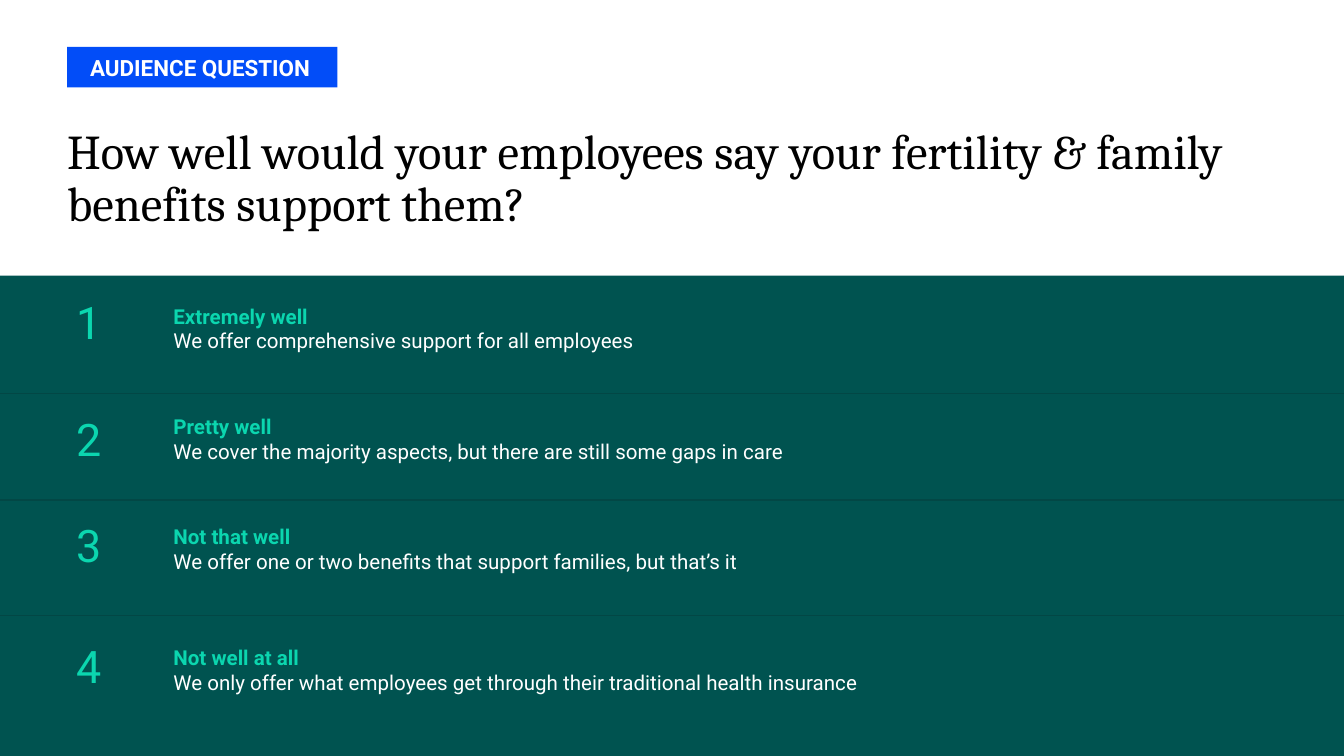
from lxml.etree import SubElement
from pptx import Presentation
from pptx.dml.color import RGBColor
from pptx.enum.shapes import MSO_CONNECTOR, MSO_SHAPE
from pptx.enum.text import MSO_ANCHOR, PP_ALIGN
from pptx.oxml.ns import qn
from pptx.util import Inches, Pt

WHITE = RGBColor(0xFF, 0xFF, 0xFF)
BLACK = RGBColor(0x00, 0x00, 0x00)
BLUE = RGBColor(0x02, 0x4D, 0xF8)
GREEN = RGBColor(0x00, 0x53, 0x50)
DARK_GREEN = RGBColor(0x02, 0x47, 0x45)
MINT = RGBColor(0x0B, 0xD6, 0xAF)
SERIF, SANS = "Cambria", "Roboto"

WIDTH = 10
HEIGHT = WIDTH * 9 / 16
MARGIN = 0.05 * WIDTH
PANEL_TOP = 2.05

# Row top, number inset, text inset, heading, detail
ANSWERS = [
    (PANEL_TOP, 0.13, 0.21, "Extremely well",
     "We offer comprehensive support for all employees"),
    (2.93, 0.12, 0.15, "Pretty well",
     "We cover the majority aspects, but there are still some gaps in care"),
    (3.72, 0.12, 0.18, "Not that well",
     "We offer one or two benefits that support families, but that’s it"),
    (4.58, 0.16, 0.22, "Not well at all",
     "We only offer what employees get through their traditional health insurance"),
]


def add_box(s, shape, x, y, w, h, color):
    box = s.shapes.add_shape(shape, Inches(x), Inches(y), Inches(w), Inches(h))
    box.shadow.inherit = False
    box.fill.solid()
    box.fill.fore_color.rgb = color
    box.line.fill.background()
    return box


def add_text(s, x, y, w, h, lines, size, font=SANS, align=PP_ALIGN.LEFT,
             anchor=MSO_ANCHOR.TOP, spacing=1.0):
    """Each line is (text, color, bold); a line break parts it from the next."""
    tf = s.shapes.add_textbox(Inches(x), Inches(y), Inches(w), Inches(h)).text_frame
    tf.word_wrap = True
    tf.vertical_anchor = anchor
    tf.margin_left = tf.margin_right = tf.margin_top = tf.margin_bottom = 0
    p = tf.paragraphs[0]
    p.alignment = align
    p.line_spacing = spacing
    p.font.size = Pt(size)
    for i, (text, color, bold) in enumerate(lines):
        if i:
            p.add_line_break()
        r = p.add_run()
        r.text = text
        r.font.name = font
        r.font.size = Pt(size)
        r.font.bold = bold
        r.font.color.rgb = color


def add_divider(s, x, y, w):
    line = s.shapes.add_connector(MSO_CONNECTOR.STRAIGHT, Inches(x), Inches(y),
                                  Inches(x + w), Inches(y))
    line.line.color.rgb = DARK_GREEN
    line.line.width = Pt(0.75)
    SubElement(line._element.spPr, qn("a:effectLst"))


def add_header(s, x, y, w):
    add_box(s, MSO_SHAPE.RECTANGLE, x, y, 2.01, 0.3, BLUE)
    add_text(s, x + 0.17, y + 0.05, 1.79, 0.2,
             [("AUDIENCE QUESTION", WHITE, True)], 12)
    question = ("How well would your employees say your fertility & family "
                "benefits support them?")
    add_text(s, x, y + 0.6, w, 0.79, [(question, BLACK, False)], 26,
             font=SERIF, spacing=0.9)


def add_answers(s, x, y, w, h):
    panel = add_box(s, MSO_SHAPE.ROUNDED_RECTANGLE, x, y, w, h, GREEN)
    panel.adjustments[0] = 0
    for number, (top, number_inset, text_inset, heading, detail) in enumerate(ANSWERS, 1):
        add_text(s, x + 0.35, top + number_inset, 0.62, 0.42,
                 [(str(number), MINT, False)], 24,
                 align=PP_ALIGN.CENTER, anchor=MSO_ANCHOR.MIDDLE)
        add_text(s, x + 1.29, top + text_inset, 7.73, 0.47,
                 [(heading, MINT, True), (detail, WHITE, False)], 11)
        if number > 1:
            add_divider(s, x, top, w)


def main():
    prs = Presentation()
    prs.slide_width, prs.slide_height = Inches(WIDTH), Inches(HEIGHT)
    s = prs.slides.add_slide(prs.slide_layouts[6])
    add_header(s, MARGIN, 0.35, 9.16)
    add_answers(s, 0, PANEL_TOP, WIDTH, HEIGHT - PANEL_TOP)
    prs.save("out.pptx")


if __name__ == "__main__":
    main()
